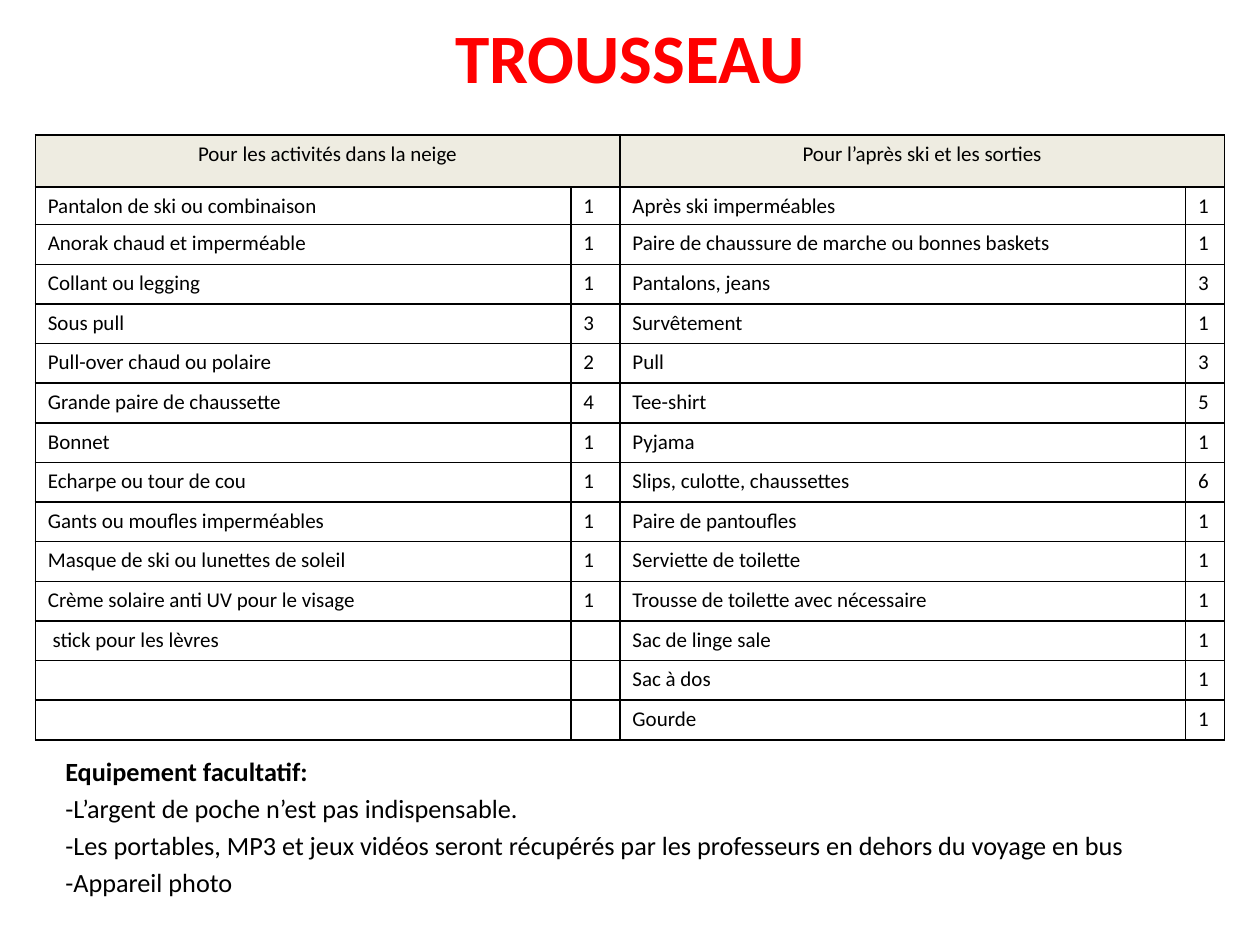
"""Build the ski trip packing list slide."""
import lxml.etree
import pptx
import pptx.dml.color
import pptx.enum.text
import pptx.oxml.ns
import pptx.util

RED = pptx.dml.color.RGBColor(0xFF, 0x00, 0x00)
BLACK = pptx.dml.color.RGBColor(0x00, 0x00, 0x00)
CREAM = pptx.dml.color.RGBColor(0xEE, 0xEC, 0xE1)
FONT = "Calibri"
SLIDE_WIDTH = pptx.util.Inches(10)
SLIDE_HEIGHT = pptx.util.Inches(7.5)
COLUMN_WIDTHS = [4.25, 0.39, 4.49, 0.31]
TABLE_HEIGHT, HEADER_HEIGHT, FIRST_ROW_HEIGHT = 4.8, 0.41, 0.3

HEADINGS = ["Pour les activités dans la neige", "Pour l’après ski et les sorties"]
CLOTHING = [
    ("Pantalon de ski ou combinaison", "1", "Après ski imperméables", "1"),
    ("Anorak chaud et imperméable", "1", "Paire de chaussure de marche ou bonnes baskets", "1"),
    ("Collant ou legging", "1", "Pantalons, jeans", "3"),
    ("Sous pull", "3", "Survêtement", "1"),
    ("Pull-over chaud ou polaire", "2", "Pull", "3"),
    ("Grande paire de chaussette", "4", "Tee-shirt", "5"),
    ("Bonnet", "1", "Pyjama", "1"),
    ("Echarpe ou tour de cou", "1", "Slips, culotte, chaussettes", "6"),
    ("Gants ou moufles imperméables", "1", "Paire de pantoufles", "1"),
    ("Masque de ski ou lunettes de soleil", "1", "Serviette de toilette", "1"),
    ("Crème solaire anti UV pour le visage", "1", "Trousse de toilette avec nécessaire", "1"),
    (" stick pour les lèvres", "", "Sac de linge sale", "1"),
    ("", "", "Sac à dos", "1"),
    ("", "", "Gourde", "1"),
]
OPTIONAL_ITEMS = [
    "Equipement facultatif:",
    "-L’argent de poche n’est pas indispensable.",
    "-Les portables, MP3 et jeux vidéos seront récupérés par les professeurs en dehors du voyage en bus",
    "-Appareil photo",
]


def share(left, top, width, height):
    """Turn percentages of the slide's size into lengths."""
    return (int(SLIDE_WIDTH * left / 100), int(SLIDE_HEIGHT * top / 100),
            int(SLIDE_WIDTH * width / 100), int(SLIDE_HEIGHT * height / 100))


def format_runs(paragraph, size, color=BLACK, bold=False):
    """Format every run of a paragraph."""
    for run in paragraph.runs:
        run.font.name = FONT
        run.font.size = pptx.util.Pt(size)
        run.font.bold = bold
        run.font.color.rgb = color


def add_title(slide, wording):
    """Place and format the slide title."""
    title = slide.shapes.title
    title.left, title.top, title.width, title.height = share(7.5, 1.7, 85, 8.4)
    title.text_frame.text = wording
    title.text_frame.vertical_anchor = pptx.enum.text.MSO_ANCHOR.MIDDLE
    heading = title.text_frame.paragraphs[0]
    heading.alignment = pptx.enum.text.PP_ALIGN.CENTER
    format_runs(heading, 39.6, RED, True)


def add_borders(cell):
    """Draw thin black lines on all four sides of a cell."""
    properties = cell._tc.get_or_add_tcPr()
    for position, side in enumerate(("lnL", "lnR", "lnT", "lnB")):
        line = lxml.etree.Element(pptx.oxml.ns.qn(f"a:{side}"), w=str(pptx.util.Pt(1)))
        fill = lxml.etree.SubElement(line, pptx.oxml.ns.qn("a:solidFill"))
        lxml.etree.SubElement(fill, pptx.oxml.ns.qn("a:srgbClr"), val=str(BLACK))
        properties.insert(position, line)


def fill_cell(cell, wording, is_header):
    """Write one table cell and set its look."""
    cell.text = wording
    entry = cell.text_frame.paragraphs[0]
    if is_header:
        entry.alignment = pptx.enum.text.PP_ALIGN.CENTER
        cell.fill.solid()
        cell.fill.fore_color.rgb = CREAM
    else:
        cell.fill.background()
    format_runs(entry, 12)
    if not wording:
        lxml.etree.SubElement(entry._p, pptx.oxml.ns.qn("a:endParaRPr"), sz="1200")
    add_borders(cell)


def add_packing_table(slide):
    """Add the two-part clothing table."""
    rows = [(HEADINGS[0], "", HEADINGS[1], "")] + CLOTHING
    packing = slide.shapes.add_table(len(rows), len(COLUMN_WIDTHS), *share(2.8, 14.3, 94.4, 64)).table
    for column, width in zip(packing.columns, COLUMN_WIDTHS):
        column.width = pptx.util.Inches(width)
    item_height = (TABLE_HEIGHT - HEADER_HEIGHT - FIRST_ROW_HEIGHT) / (len(rows) - 2)
    heights = [HEADER_HEIGHT, FIRST_ROW_HEIGHT] + [item_height] * (len(rows) - 2)
    for row, height in zip(packing.rows, heights):
        row.height = pptx.util.Inches(height)
    for row_index, entries in enumerate(rows):
        for column_index, wording in enumerate(entries):
            fill_cell(packing.cell(row_index, column_index), wording, row_index == 0)
    for first in (0, 2):
        packing.cell(0, first).merge(packing.cell(0, first + 1))


def add_optional_list(slide):
    """Add the list of optional equipment under the table."""
    frame = slide.shapes.add_textbox(*share(4.2, 79.3, 92.9, 25.6)).text_frame
    frame.word_wrap = True
    frame.text = "\n".join(OPTIONAL_ITEMS)
    for index, item in enumerate(frame.paragraphs):
        item.space_before = pptx.util.Pt(3)
        format_runs(item, 15, bold=index == 0)


def main():
    """Build and save the slide."""
    deck = pptx.Presentation()
    deck.slide_width, deck.slide_height = SLIDE_WIDTH, SLIDE_HEIGHT
    slide = deck.slides.add_slide(deck.slide_layouts[5])
    add_title(slide, "TROUSSEAU")
    add_optional_list(slide)
    add_packing_table(slide)
    deck.save("out.pptx")


if __name__ == "__main__":
    main()
